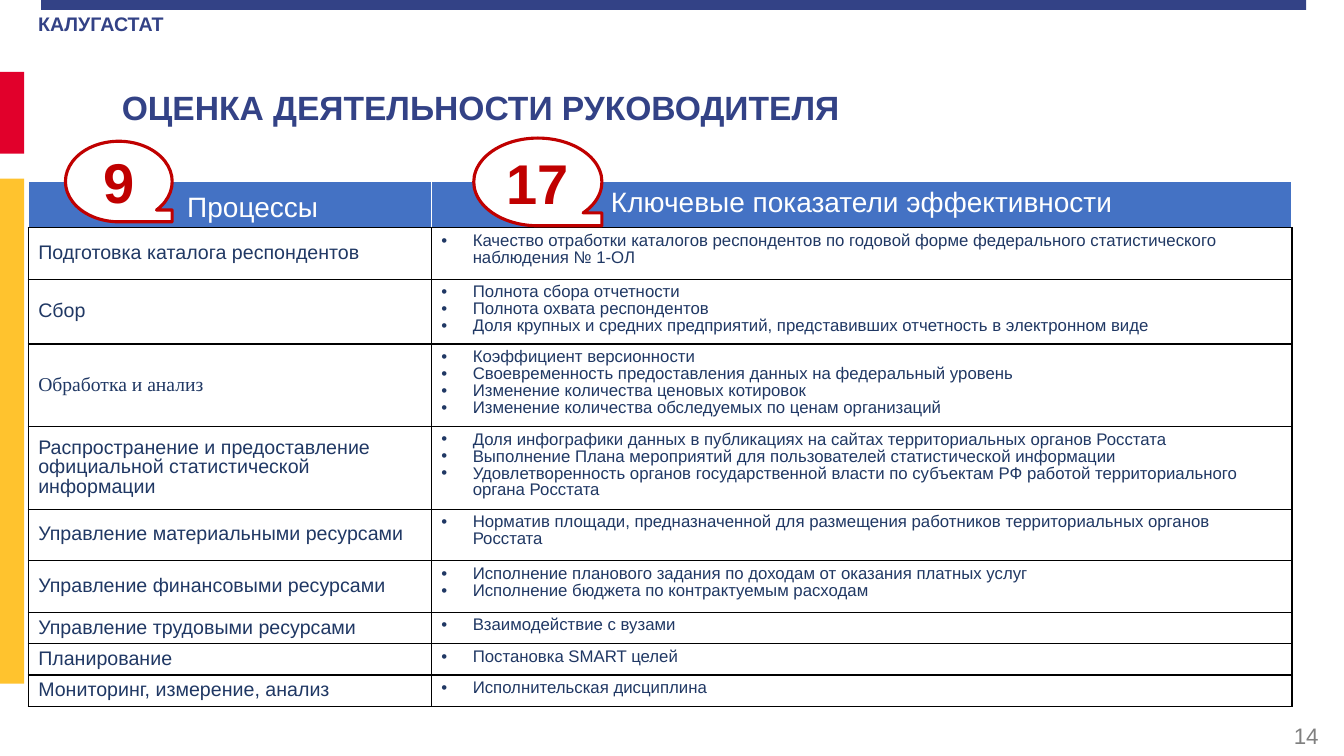
from dataclasses import dataclass

from lxml import etree
from pptx import Presentation
from pptx import util as u
from pptx.dml.color import RGBColor
from pptx.enum import shapes, text
from pptx.oxml import ns

NAVY = RGBColor(0x33, 0x42, 0x86)
RED = RGBColor(0xE1, 0x00, 0x2B)
YELLOW = RGBColor(0xFF, 0xC3, 0x2E)
GRAY = RGBColor(0x80, 0x80, 0x80)
BLUE = RGBColor(0x44, 0x72, 0xC4)
INK = RGBColor(0x20, 0x38, 0x64)
CRIMSON = RGBColor(0xC0, 0x00, 0x00)
WHITE = RGBColor(0xFF, 0xFF, 0xFF)
BLACK = RGBColor(0x00, 0x00, 0x00)

MIDDLE = text.MSO_ANCHOR.MIDDLE
TOP = text.MSO_ANCHOR.TOP
BOTTOM = text.MSO_ANCHOR.BOTTOM
LEFT = text.PP_ALIGN.LEFT
CENTER = text.PP_ALIGN.CENTER
RIGHT = text.PP_ALIGN.RIGHT


@dataclass
class Area:
    left: float
    top: float
    width: float
    height: float

    def lengths(self) -> list:
        return [u.Cm(v) for v in (self.left, self.top, self.width, self.height)]


@dataclass
class Style:
    size: int
    color: RGBColor
    bold: bool = False
    align: text.PP_ALIGN = LEFT
    spacing: float = 1.0
    font: str = "Arial"
    bullet: bool = False


@dataclass
class Bar:
    area: Area
    color: RGBColor


@dataclass
class Label:
    area: Area
    words: str
    style: Style
    anchor: text.MSO_ANCHOR


@dataclass
class Badge:
    area: Area
    count: str


@dataclass
class Process:
    name: str
    height: float
    indicators: list[str]
    font: str = "Arial"


BARS = [
    Bar(Area(1.04, 0, 31.88, 0.25), NAVY),
    Bar(Area(0, 1.81, 0.61, 2.06), RED),
    Bar(Area(0, 4.5, 0.61, 12.73), YELLOW),
]
LABELS = [
    Label(Area(25.86, 18.03, 7.62, 1.02), "14", Style(16, GRAY, align=RIGHT), MIDDLE),
    Label(Area(2.82, 2.06, 19.28, 1.9), "ОЦЕНКА ДЕЯТЕЛЬНОСТИ РУКОВОДИТЕЛЯ",
          Style(24, NAVY, bold=True), TOP),
    Label(Area(0.71, 0.46, 4.17, 0.51), "КАЛУГАСТАТ",
          Style(14, NAVY, bold=True, spacing=0.5), MIDDLE),
]
BADGES = [
    Badge(Area(11.94, 3.48, 3.23, 2.21), "17"),
    Badge(Area(1.65, 3.56, 2.69, 2.03), "9"),
]
TABLE_AREA = Area(0.71, 4.57, 31.85, 12.92)
COLUMN_WIDTHS = [10.16, 21.69]
HEADER_HEIGHT = 1.17
PROCESSES = [
    Process("Подготовка каталога респондентов", 1.3, [
        "Качество отработки каталогов респондентов по годовой форме "
        "федерального статистического наблюдения № 1-ОЛ"]),
    Process("Сбор", 1.5, [
        "Полнота сбора отчетности",
        "Полнота охвата респондентов",
        "Доля крупных и средних предприятий, представивших отчетность в электронном виде"]),
    Process("Обработка и анализ", 2.01, [
        "Коэффициент версионности",
        "Своевременность предоставления данных на федеральный уровень",
        "Изменение количества ценовых котировок",
        "Изменение количества обследуемых по ценам организаций"], "Times New Roman"),
    Process("Распространение и предоставление официальной статистической информации", 2.06, [
        "Доля инфографики данных в публикациях на сайтах территориальных органов Росстата",
        "Выполнение Плана мероприятий для пользователей статистической информации",
        "Удовлетворенность органов государственной власти по субъектам РФ "
        "работой территориального органа Росстата"]),
    Process("Управление материальными ресурсами", 1.3, [
        "Норматив площади, предназначенной для размещения работников "
        "территориальных органов Росстата"]),
    Process("Управление финансовыми ресурсами", 1.3, [
        "Исполнение планового задания по доходам от оказания платных услуг",
        "Исполнение бюджета по контрактуемым расходам"]),
    Process("Управление трудовыми ресурсами", 0.76, ["Взаимодействие с вузами"]),
    Process("Планирование", 0.76, ["Постановка SMART целей"]),
    Process("Мониторинг, измерение, анализ", 0.76, ["Исполнительская дисциплина"]),
]


def write(frame, lines: list[str], style: Style) -> None:
    frame.word_wrap = True
    for index, line in enumerate(lines):
        para = frame.add_paragraph() if index else frame.paragraphs[0]
        if style.bullet:
            props = para._p.get_or_add_pPr()
            props.set("marL", str(u.Cm(0.79)))
            props.set("indent", str(-u.Cm(0.79)))
            etree.SubElement(props, ns.qn("a:buFont"), typeface="Arial")
            etree.SubElement(props, ns.qn("a:buChar"), char="•")
        para.alignment = style.align
        para.line_spacing = style.spacing
        span = para.add_run()
        span.text = line
        span.font.name = style.font
        span.font.size = u.Pt(style.size)
        span.font.bold = style.bold
        span.font.color.rgb = style.color


def draw_shape(page, kind: shapes.MSO_SHAPE, area: Area, color: RGBColor):
    shape = page.shapes.add_shape(kind, *area.lengths())
    shape.shadow.inherit = False
    shape.fill.solid()
    shape.fill.fore_color.rgb = color
    shape.line.fill.background()
    return shape


def draw_label(page, label: Label) -> None:
    box = page.shapes.add_textbox(*label.area.lengths())
    box.text_frame.vertical_anchor = label.anchor
    write(box.text_frame, [label.words], label.style)


def draw_badge(page, badge: Badge) -> None:
    kind = shapes.MSO_SHAPE.FLOWCHART_SEQUENTIAL_ACCESS_STORAGE
    shape = draw_shape(page, kind, badge.area, WHITE)
    shape.line.color.rgb = CRIMSON
    shape.line.width = u.Pt(2.25)
    shape.text_frame.vertical_anchor = MIDDLE
    write(shape.text_frame, [badge.count], Style(40, CRIMSON, bold=True, align=CENTER))


def fill_cell(cell, lines: list[str], style: Style, anchor: text.MSO_ANCHOR,
              header: bool = False) -> None:
    cell.vertical_anchor = anchor
    write(cell.text_frame, lines, style)
    if header:
        cell.fill.solid()
        cell.fill.fore_color.rgb = BLUE
    else:
        cell.fill.background()
    props = cell._tc.get_or_add_tcPr()
    for index, side in enumerate("LRTB"):
        border = etree.Element(ns.qn(f"a:ln{side}"), w=str(u.Pt(1)))
        fill = etree.SubElement(border, ns.qn("a:solidFill"))
        color = WHITE if header and side != "B" else BLACK
        etree.SubElement(fill, ns.qn("a:srgbClr"), val=str(color))
        props.insert(index, border)


def draw_table(page) -> None:
    table = page.shapes.add_table(len(PROCESSES) + 1, 2, *TABLE_AREA.lengths()).table
    table.first_row = table.horz_banding = False
    for column, width in zip(table.columns, COLUMN_WIDTHS):
        column.width = u.Cm(width)
    table.rows[0].height = u.Cm(HEADER_HEIGHT)
    heading = Style(20, WHITE, align=CENTER, spacing=0.8)
    fill_cell(table.cell(0, 0), ["Процессы"], heading, BOTTOM, header=True)
    table.cell(0, 0).margin_left = u.Cm(1.41)
    fill_cell(table.cell(0, 1), ["Ключевые показатели эффективности"], heading, MIDDLE, header=True)
    for row, process in enumerate(PROCESSES, start=1):
        table.rows[row].height = u.Cm(process.height)
        fill_cell(table.cell(row, 0), [process.name],
                  Style(14, INK, spacing=0.9, font=process.font), MIDDLE)
        fill_cell(table.cell(row, 1), process.indicators,
                  Style(12, INK, spacing=0.9, bullet=True), TOP)


def main() -> None:
    deck = Presentation()
    deck.slide_width, deck.slide_height = u.Cm(33.87), u.Cm(19.05)
    page = deck.slides.add_slide(deck.slide_layouts[6])
    for bar in BARS:
        draw_shape(page, shapes.MSO_SHAPE.RECTANGLE, bar.area, bar.color)
    for label in LABELS:
        draw_label(page, label)
    draw_table(page)
    for badge in BADGES:
        draw_badge(page, badge)
    deck.save("out.pptx")


if __name__ == "__main__":
    main()
